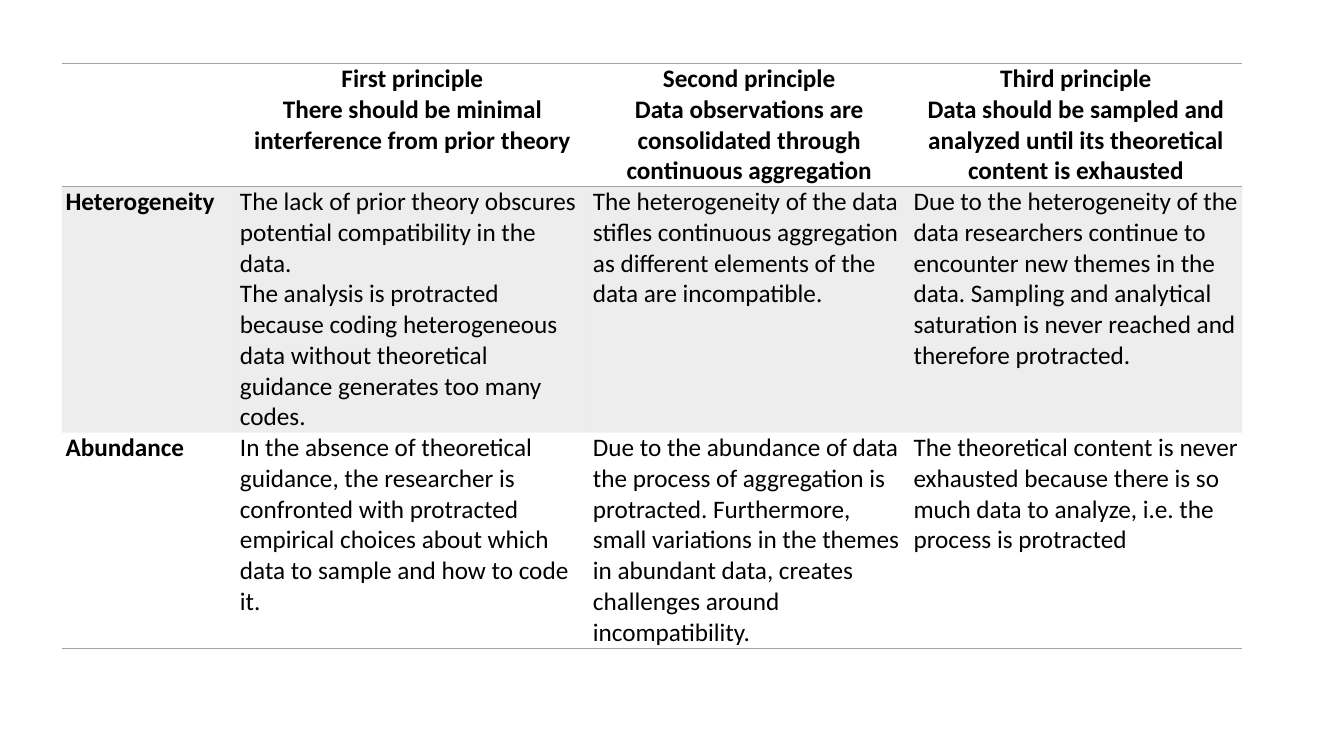
import lxml.etree
import pptx
import pptx.dml.color
import pptx.enum.text
import pptx.oxml.ns
import pptx.util

HEADS = [
    [],
    ["First principle",
     "There should be minimal interference from prior theory"],
    ["Second principle",
     "Data observations are consolidated through continuous aggregation"],
    ["Third principle",
     "Data should be sampled and analyzed until its theoretical content "
     "is exhausted"],
]
MIXED = [
    ["Heterogeneity"],
    ["The lack of prior theory obscures potential compatibility in the data.",
     "The analysis is protracted because coding heterogeneous data without "
     "theoretical guidance generates too many codes."],
    ["The heterogeneity of the data stifles continuous aggregation as "
     "different elements of the data are incompatible."],
    ["Due to the heterogeneity of the data researchers continue to encounter "
     "new themes in the data. Sampling and analytical saturation is never "
     "reached and therefore protracted."],
]
AMPLE = [
    ["Abundance"],
    ["In the absence of theoretical guidance, the researcher is confronted "
     "with protracted empirical choices about which data to sample and how "
     "to code it."],
    ["Due to the abundance of data the process of aggregation is protracted. "
     "Furthermore, small variations in the themes in abundant data, creates "
     "challenges around incompatibility."],
    ["The theoretical content is never exhausted because there is so much "
     "data to analyze, i.e. the process is protracted"],
]

# Table grid, in percent of the slide's width and height
LEFT, TOP = 4.58, 8.4
WIDTHS = [12.98, 26.26, 23.86, 24.76]
HEIGHTS = [16.27, 32.53, 28.53]


def color(text):
    return pptx.dml.color.RGBColor.from_string(text)


def add(parent, tag, **attrs):
    return lxml.etree.SubElement(parent, pptx.oxml.ns.qn(tag), **attrs)


class Deck:
    font, size = "Calibri", 18
    ink, gray = "000000", "A5A5A5"
    plain = "{2D5ABB26-0587-4C30-8999-92F81FD0307C}"

    def __init__(self):
        self.show = pptx.Presentation()
        self.show.slide_width = pptx.util.Inches(13.33)
        self.show.slide_height = pptx.util.Inches(7.5)
        self.slide = self.show.slides.add_slide(self.show.slide_layouts[6])

    def wide(self, share):
        return round(self.show.slide_width * share / 100)

    def high(self, share):
        return round(self.show.slide_height * share / 100)

    def table(self, left, top, widths, heights):
        frame = self.slide.shapes.add_table(
            len(heights), len(widths), self.wide(left), self.high(top),
            self.wide(sum(widths)), self.high(sum(heights)))
        table = frame.table
        table.first_row = table.horz_banding = False
        style = pptx.oxml.ns.qn("a:tableStyleId")
        frame.element.find(".//" + style).text = self.plain
        for col, width in zip(table.columns, widths):
            col.width = self.wide(width)
        for row, height in zip(table.rows, heights):
            row.height = self.high(height)
        return table

    def rule(self, cell, sides):
        props = cell._tc.get_or_add_tcPr()
        for side in sides:
            line = add(props, "a:ln" + side, w=str(pptx.util.Pt(1)))
            fill = add(line, "a:solidFill")
            add(fill, "a:srgbClr", val=self.gray)

    def shade(self, cell, alpha):
        cell.fill.solid()
        cell.fill.fore_color.rgb = color(self.gray)
        tint = cell._tc.tcPr.find(".//" + pptx.oxml.ns.qn("a:srgbClr"))
        add(tint, "a:alpha", val=str(alpha * 1000))

    def label(self, cell, lines, bold, center):
        cell.margin_left = cell.margin_right = pptx.util.Inches(0.04)
        cell.margin_top = cell.margin_bottom = 0
        frame = cell.text_frame
        for index, line in enumerate(lines):
            para = frame.add_paragraph() if index else frame.paragraphs[0]
            if center:
                para.alignment = pptx.enum.text.PP_ALIGN.CENTER
            run = para.add_run()
            run.text = line
            run.font.name = self.font
            run.font.size = pptx.util.Pt(self.size)
            run.font.bold = bold
            run.font.color.rgb = color(self.ink)


def main():
    deck = Deck()
    table = deck.table(LEFT, TOP, WIDTHS, HEIGHTS)

    # Rules above and below the heads and at the foot; gray middle row
    sides = ["TB", "", "B"]
    for r, row in enumerate([HEADS, MIXED, AMPLE]):
        for c, lines in enumerate(row):
            cell = table.cell(r, c)
            deck.rule(cell, sides[r])
            if r == 1:
                deck.shade(cell, 20)
            else:
                cell.fill.background()
            deck.label(cell, lines, bold=r == 0 or c == 0, center=r == 0)

    deck.show.save("out.pptx")


if __name__ == "__main__":
    main()
